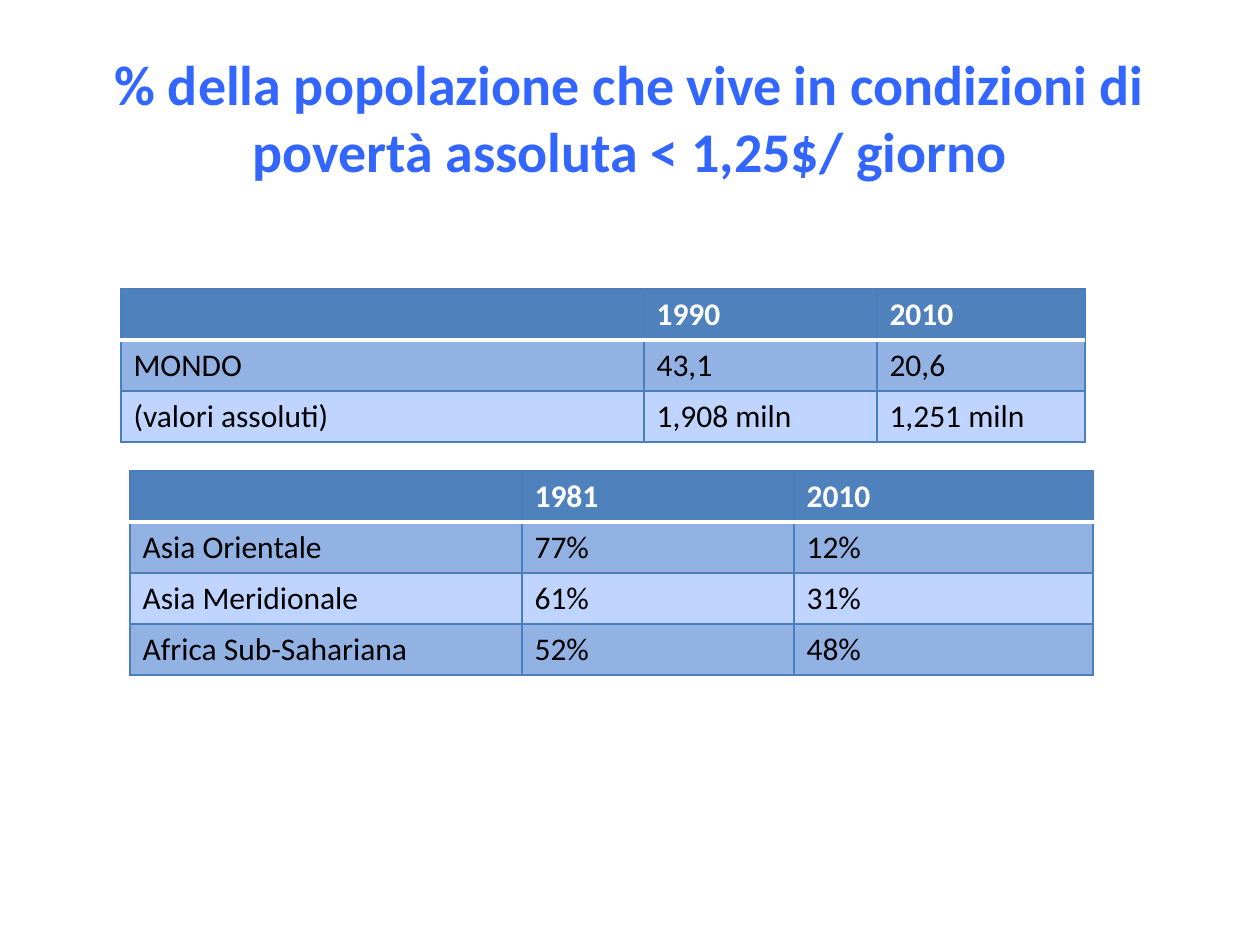
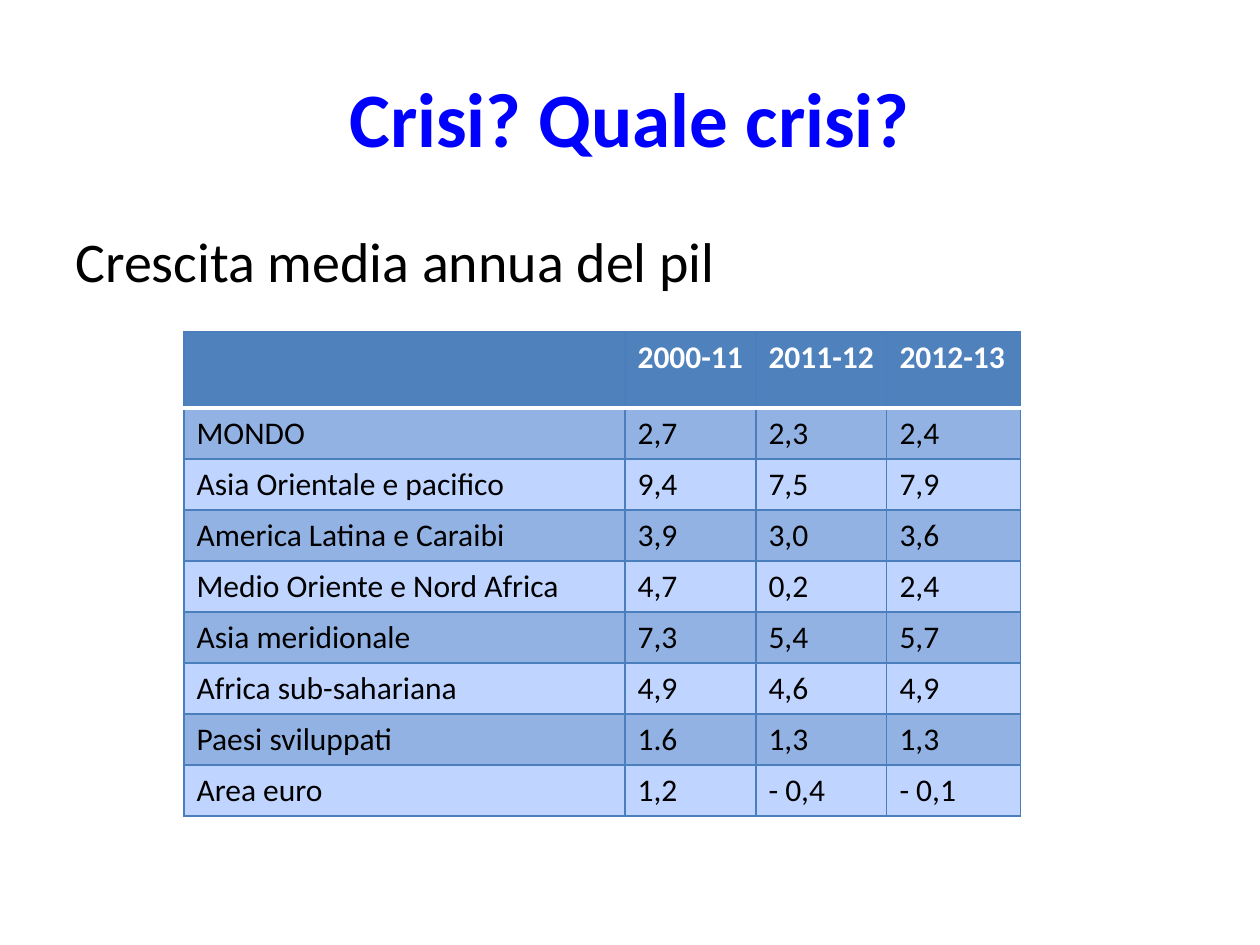
from lxml import etree
from pptx import Presentation
from pptx import util as u
from pptx.dml.color import RGBColor
from pptx.enum import text
from pptx.oxml.ns import qn

PX = 914400 / 126
FONT = "Calibri"
WHITE = RGBColor(0xFF, 0xFF, 0xFF)
BLACK = RGBColor(0x00, 0x00, 0x00)
SKY_BLUE = RGBColor(0x33, 0x66, 0xFF)
PURE_BLUE = RGBColor(0x00, 0x00, 0xFF)
HEADER_BLUE = RGBColor(0x4F, 0x81, 0xBD)
BAND_DARK = RGBColor(0x93, 0xB2, 0xE4)
BAND_LIGHT = RGBColor(0xBF, 0xD4, 0xFF)
GRID_BLUE = RGBColor(0x4B, 0x7E, 0xBC)
ROW_HEIGHT = 51

WORLD_POVERTY = [
    ["", "1990", "2010"],
    ["MONDO", "43,1", "20,6"],
    ["(valori assoluti)", "1,908 miln", "1,251 miln"],
]
REGIONAL_POVERTY = [
    ["", "1981", "2010"],
    ["Asia Orientale", "77%", "12%"],
    ["Asia Meridionale", "61%", "31%"],
    ["Africa Sub-Sahariana", "52%", "48%"],
]
GDP_GROWTH = [
    ["", "2000-11", "2011-12", "2012-13"],
    ["MONDO", "2,7", "2,3", "2,4"],
    ["Asia Orientale e pacifico", "9,4", "7,5", "7,9"],
    ["America Latina e Caraibi", "3,9", "3,0", "3,6"],
    ["Medio Oriente e Nord Africa", "4,7", "0,2", "2,4"],
    ["Asia meridionale", "7,3", "5,4", "5,7"],
    ["Africa sub-sahariana", "4,9", "4,6", "4,9"],
    ["Paesi sviluppati", "1.6", "1,3", "1,3"],
    ["Area euro", "1,2", "- 0,4", "- 0,1"],
]


def px(length):
    return u.Emu(round(length * PX))


def write(frame, words, size=18, color=BLACK, bold=False,
          align=text.PP_ALIGN.LEFT, anchor=text.MSO_ANCHOR.TOP, before=0):
    frame.word_wrap = True
    frame.vertical_anchor = anchor
    paragraph = frame.paragraphs[0]
    paragraph.alignment = align
    paragraph.space_before = u.Pt(before)
    run = paragraph.add_run()
    run.text = words
    run.font.name = FONT
    run.font.size = u.Pt(size)
    run.font.bold = bold
    run.font.color.rgb = color


def add_text(slide, words, left, top, width, height, **style):
    box = slide.shapes.add_textbox(px(left), px(top), px(width), px(height))
    write(box.text_frame, words, **style)


def add_title(slide, words, size, color):
    add_text(slide, words, 63, 38, 1134, 157, size=size, color=color, bold=True,
             align=text.PP_ALIGN.CENTER, anchor=text.MSO_ANCHOR.MIDDLE)


def set_border(cell, side, color, points):
    line = etree.Element(qn(f"a:ln{side}"), w=str(u.Pt(points)))
    fill = etree.SubElement(line, qn("a:solidFill"))
    etree.SubElement(fill, qn("a:srgbClr"), val=str(color))
    return line


def style_cell(cell, row):
    header_rule = (WHITE, 2)
    grid_rule = (GRID_BLUE, 0.75)
    rules = {
        "L": grid_rule,
        "R": grid_rule,
        "T": header_rule if row == 1 else grid_rule,
        "B": header_rule if row == 0 else grid_rule,
    }
    properties = cell._tc.get_or_add_tcPr()
    for side, (color, points) in rules.items():
        properties.append(set_border(cell, side, color, points))
    cell.fill.solid()
    if row == 0:
        cell.fill.fore_color.rgb = HEADER_BLUE
    else:
        cell.fill.fore_color.rgb = BAND_DARK if row % 2 else BAND_LIGHT


def add_data_table(slide, records, left, top, widths, header_height=ROW_HEIGHT):
    heights = [header_height] + [ROW_HEIGHT] * (len(records) - 1)
    frame = slide.shapes.add_table(len(records), len(widths), px(left), px(top),
                                   px(sum(widths)), px(sum(heights)))
    table = frame.table
    table.horz_banding = False
    for column, width in zip(table.columns, widths):
        column.width = px(width)
    for row, (record, height) in enumerate(zip(records, heights)):
        table.rows[row].height = px(height)
        for column, value in enumerate(record):
            cell = table.cell(row, column)
            style_cell(cell, row)
            if value:
                write(cell.text_frame, value, bold=row == 0,
                      color=BLACK if row else WHITE)


def build_poverty_slide(slide):
    add_title(slide, "% della popolazione che vive in condizioni di "
              "povertà assoluta < 1,25$/ giorno", 32, SKY_BLUE)
    add_data_table(slide, WORLD_POVERTY, 121, 289, [523, 233, 208])
    add_data_table(slide, REGIONAL_POVERTY, 130, 471, [392, 272, 299])


def build_growth_slide(slide):
    add_title(slide, "Crisi? Quale crisi?", 44, PURE_BLUE)
    add_text(slide, "Crescita media annua del pil", 63, 220, 1134, 624,
             size=32, before=3)
    add_data_table(slide, GDP_GROWTH, 184, 332, [441, 131, 131, 134],
                   header_height=76)


def main():
    deck = Presentation()
    deck.slide_width = px(1260)
    deck.slide_height = px(945)
    for build in (build_poverty_slide, build_growth_slide):
        build(deck.slides.add_slide(deck.slide_layouts[6]))
    deck.save("out.pptx")


if __name__ == "__main__":
    main()
